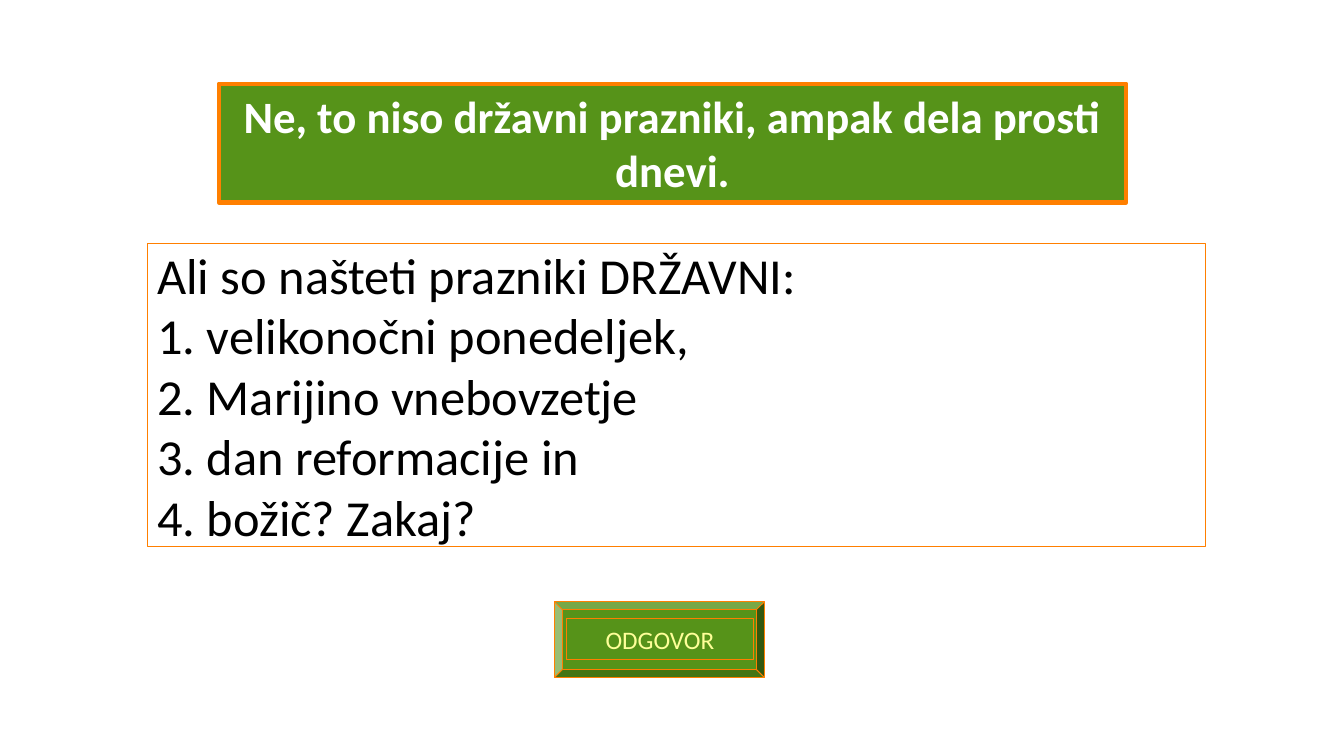
from pptx import Presentation
from pptx.dml.color import RGBColor
from pptx.enum.shapes import MSO_SHAPE
from pptx.enum.text import MSO_ANCHOR, MSO_AUTO_SIZE, PP_ALIGN
from pptx.oxml.ns import qn
from pptx.util import Inches, Pt
from lxml import etree

BEVEL, RECTANGLE = MSO_SHAPE.BEVEL, MSO_SHAPE.RECTANGLE
TOP, MIDDLE = MSO_ANCHOR.TOP, MSO_ANCHOR.MIDDLE
LEFT, CENTER = PP_ALIGN.LEFT, PP_ALIGN.CENTER
NO_AUTOFIT = MSO_AUTO_SIZE.NONE

UNIT = 1 / 6  # grid step in inches: 80 columns by 45 rows
GREEN, ORANGE, WHITE, BLACK, YELLOW = "569319", "FF7F00", "FFFFFF", "000000", "FFFF99"


def color(value):
    return RGBColor.from_string(value)


class QuizSlide:
    """Holds the quiz style and the current slide."""
    font = "Calibri"

    def __init__(self, prs):
        self.slide = prs.slides.add_slide(prs.slide_layouts[1])

    def box(self, col, row, cols, rows):
        return [Inches(round(n * UNIT, 2)) for n in (col, row, cols, rows)]

    def paint(self, shape, fill, width):
        shape.fill.solid()
        shape.fill.fore_color.rgb = color(fill)
        shape.line.color.rgb = color(ORANGE)
        shape.line.width = Pt(width)

    def set_text(self, shape, text, size, ink, align=CENTER, anchor=TOP, bold=False):
        frame = shape.text_frame
        frame.text = text
        frame.word_wrap = True
        frame.auto_size = NO_AUTOFIT
        frame.vertical_anchor = anchor
        for paragraph in frame.paragraphs:
            paragraph.alignment = align
            paragraph.space_before = Pt(0)
            properties = paragraph._p.get_or_add_pPr()
            properties.set("marL", "0")
            properties.set("indent", "0")
            etree.SubElement(properties, qn("a:buNone"))
            for run in paragraph.runs:
                run.font.name = self.font
                run.font.size = Pt(size)
                run.font.bold = bold
                run.font.color.rgb = color(ink)

    def placeholder(self, index, grid, fill, width, text, size, ink, **style):
        shape = self.slide.placeholders[index]
        shape.left, shape.top, shape.width, shape.height = self.box(*grid)
        self.paint(shape, fill, width)
        self.set_text(shape, text, size, ink, **style)

    def button(self, frame_grid, label_grid, text):
        group = self.slide.shapes.add_group_shape()
        frame = group.shapes.add_shape(BEVEL, *self.box(*frame_grid))
        frame.adjustments[0] = 0.104
        label = group.shapes.add_shape(RECTANGLE, *self.box(*label_grid))
        for part in (frame, label):
            part.shadow.inherit = False
            self.paint(part, GREEN, 0.75)
        self.set_text(label, text, 18, YELLOW)


def main():
    prs = Presentation()
    prs.slide_width, prs.slide_height = Inches(13.33), Inches(7.5)
    quiz = QuizSlide(prs)

    # Answer button
    quiz.button((33, 35.8, 12.5, 4.5), (33.75, 36.85, 11.1, 2.4), "ODGOVOR")

    # Answer
    quiz.placeholder(0, (13, 5, 54, 7.1), GREEN, 3,
                     "Ne, to niso državni prazniki, ampak dela prosti dnevi.",
                     32, WHITE, bold=True)

    # Question with the listed holidays
    question = ["Ali so našteti prazniki DRŽAVNI:",
                "1. velikonočni ponedeljek,",
                "2. Marijino vnebovzetje",
                "3. dan reformacije in",
                "4. božič? Zakaj?"]
    quiz.placeholder(1, (8.75, 14.5, 63, 18), WHITE, 0.75, "\n".join(question),
                     36, BLACK, align=LEFT, anchor=MIDDLE)

    prs.save("out.pptx")


if __name__ == "__main__":
    main()
